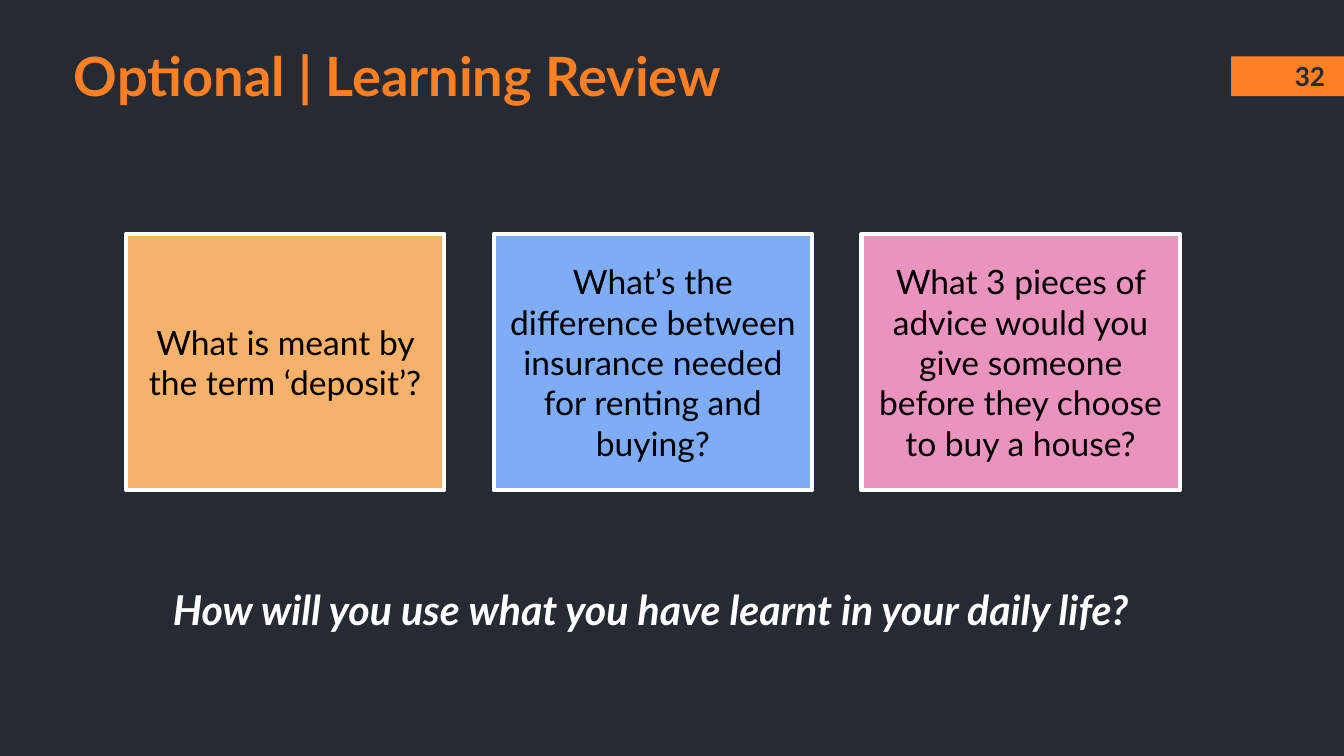
from dataclasses import dataclass

from pptx import Presentation
from pptx.dml.color import RGBColor
from pptx.enum.shapes import MSO_SHAPE
from pptx.enum.text import MSO_ANCHOR, MSO_AUTO_SIZE, PP_ALIGN
from pptx.util import Pt

RECTANGLE = MSO_SHAPE.RECTANGLE
TOP, MIDDLE = MSO_ANCHOR.TOP, MSO_ANCHOR.MIDDLE
LEFT, CENTER = PP_ALIGN.LEFT, PP_ALIGN.CENTER
NO_AUTOFIT = MSO_AUTO_SIZE.NONE
TITLE_ONLY_LAYOUT = 5


@dataclass(frozen=True)
class Theme:
    font: str = "Lato"
    background: str = "262A33"
    accent: str = "FF8022"
    white: str = "FFFFFF"
    black: str = "000000"
    apricot: str = "F6B26B"
    blue: str = "7EACF7"
    pink: str = "EA93BE"
    title_size: float = 29
    closing_size: float = 22
    card_size: float = 18
    number_size: float = 14
    inset: float = 7.2


THEME = Theme()

CARDS = [
    ("What is meant by the term ‘deposit’?", THEME.apricot),
    ("What’s the difference between insurance needed for renting and buying?", THEME.blue),
    ("What 3 pieces of advice would you give someone before they choose to buy a house?", THEME.pink),
]
CARD_LEFT, CARD_TOP = 67.5, 125.2
CARD_WIDTH, CARD_HEIGHT = 170.6, 137.5
CARD_PITCH = 197


def write_text(shape, text, size, color, align=CENTER, anchor=MIDDLE, **styles):
    """Fill the shape with one paragraph; styles are extra font attributes."""
    frame = shape.text_frame
    frame_format = {"word_wrap": True, "auto_size": NO_AUTOFIT, "vertical_anchor": anchor}
    for side in ("left", "top", "right", "bottom"):
        frame_format[f"margin_{side}"] = Pt(THEME.inset)
    for name, value in frame_format.items():
        setattr(frame, name, value)

    paragraph = frame.paragraphs[0]
    paragraph.alignment = align
    run = paragraph.add_run()
    run.text = text
    for name, value in {"name": THEME.font, "size": Pt(size), **styles}.items():
        setattr(run.font, name, value)
    run.font.color.rgb = RGBColor.from_string(color)


def add_rectangle(slide, box, fill, line=None, line_width=0):
    shape = slide.shapes.add_shape(RECTANGLE, *map(Pt, box))
    shape.shadow.inherit = False
    shape.fill.solid()
    shape.fill.fore_color.rgb = RGBColor.from_string(fill)
    if line:
        shape.line.color.rgb = RGBColor.from_string(line)
        shape.line.width = Pt(line_width)
    else:
        shape.line.fill.background()
    return shape


def set_title(slide, text):
    title = slide.shapes.title
    box = {"left": 32.4, "top": 20.2, "width": 459.4, "height": 40.3}
    for name, value in box.items():
        setattr(title, name, Pt(value))
    write_text(title, text, THEME.title_size, THEME.accent, LEFT, bold=True)


def add_page_number(slide, number):
    add_rectangle(slide, (659.5, 30.2, 60.5, 21.4), THEME.accent)
    label = slide.shapes.add_textbox(*map(Pt, (683.2, 31.7, 37.2, 18)))
    write_text(label, number, THEME.number_size, THEME.background, bold=True)


def add_question_cards(slide):
    for index, (question, fill) in enumerate(CARDS):
        box = (CARD_LEFT + index * CARD_PITCH, CARD_TOP, CARD_WIDTH, CARD_HEIGHT)
        card = add_rectangle(slide, box, fill, THEME.white, 2.25)
        write_text(card, question, THEME.card_size, THEME.black)


def add_closing_question(slide, text):
    banner = add_rectangle(slide, (64.8, 306, 567.4, 41), THEME.background, THEME.background, 1.5)
    write_text(banner, text, THEME.closing_size, THEME.white, anchor=TOP, bold=True, italic=True)


def main():
    presentation = Presentation()
    presentation.slide_width, presentation.slide_height = Pt(720), Pt(405)
    slide = presentation.slides.add_slide(presentation.slide_layouts[TITLE_ONLY_LAYOUT])
    slide.background.fill.solid()
    slide.background.fill.fore_color.rgb = RGBColor.from_string(THEME.background)

    set_title(slide, "Optional | Learning Review")
    add_page_number(slide, "32")
    add_question_cards(slide)
    add_closing_question(slide, "How will you use what you have learnt in your daily life?")
    presentation.save("out.pptx")


if __name__ == "__main__":
    main()
